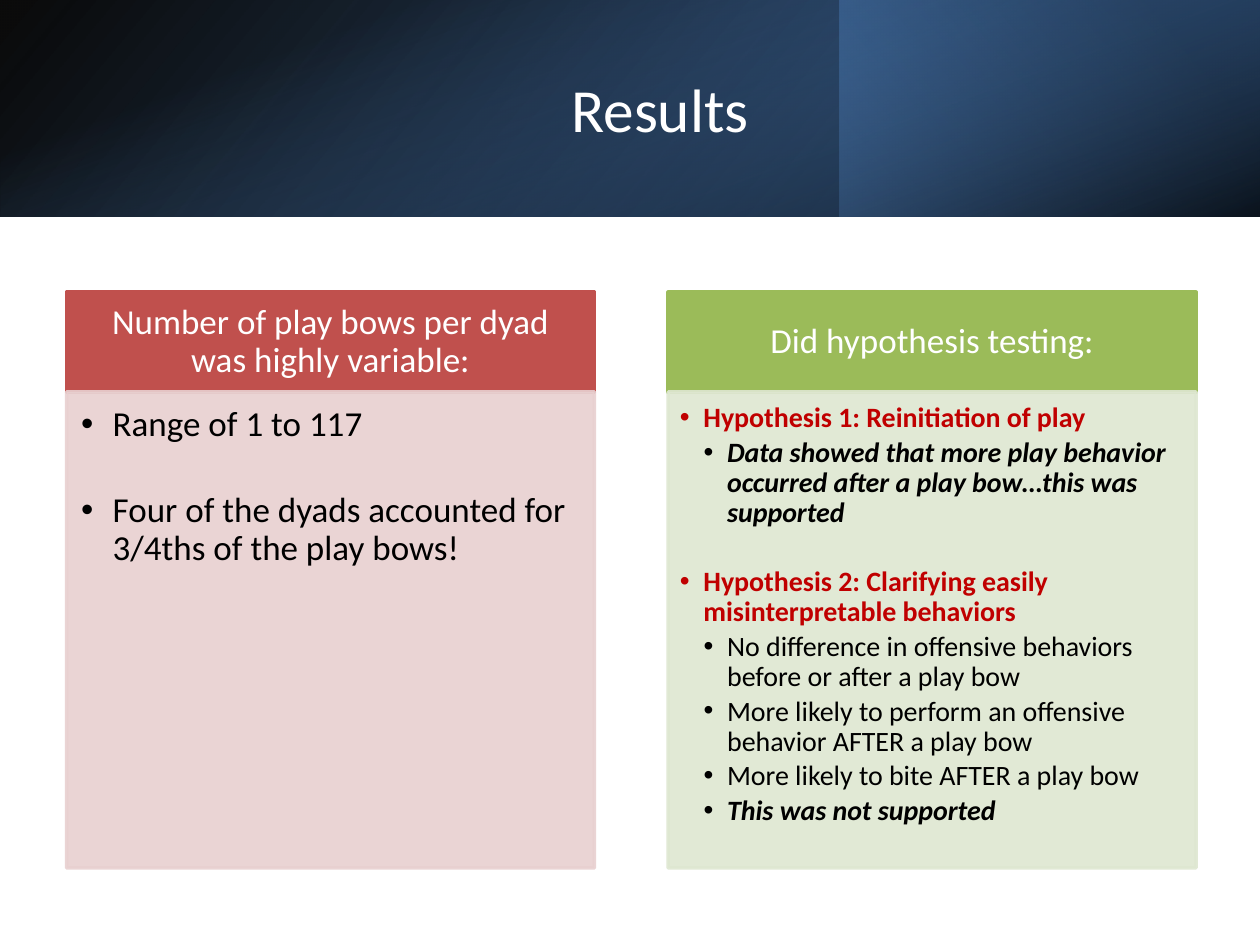
"""Build the Results slide with a shaded banner and two cards of findings."""
import dataclasses
import typing

import lxml.etree
import pptx
import pptx.dml.color
import pptx.enum.shapes
import pptx.enum.text
import pptx.oxml
import pptx.oxml.ns
import pptx.util

Pt = pptx.util.Pt
qn = pptx.oxml.ns.qn
Align = pptx.enum.text.PP_ALIGN
Anchor = pptx.enum.text.MSO_ANCHOR


@dataclasses.dataclass(frozen=True)
class Theme:
    font: str = "Calibri"
    white: str = "FFFFFF"
    black: str = "000000"
    red: str = "C00000"
    title: float = 35
    large: float = 20
    small: float = 16


class Box(typing.NamedTuple):
    left: float
    top: float
    width: float
    height: float


class Stop(typing.NamedTuple):
    place: int
    color: str
    alpha: int


class Band(typing.NamedTuple):
    box: Box
    angle: int
    stops: tuple[Stop, ...]
    turn: int = 0
    flip: bool = False


class Point(typing.NamedTuple):
    text: str
    level: int = 1
    color: str = "000000"
    bold: bool = False
    slant: bool = False
    after: float = 2.5


class Card(typing.NamedTuple):
    head: str
    dark: str
    light: str
    size: float
    indent: float
    inset: tuple[float, float, float, float]
    points: tuple[Point, ...]


THEME = Theme()
BANNER = 123.84
BANDS = (
    Band(Box(0, 0, 720, BANNER), 140,
         (Stop(0, "000000", 96), Stop(100, "376092", 100)), flip=True),
    Band(Box(480, 0, 240, BANNER), 320,
         (Stop(19, "254061", 68), Stop(100, "4F81BD", 79)), turn=180),
    Band(Box(360 - BANNER / 2, BANNER / 2 - 360, BANNER, 720), 340,
         (Stop(23, "4F81BD", 0), Stop(99, "000000", 74)), turn=90),
)
CARDS = (
    Card("Number of play bows per dyad was highly variable:", "C0504D", "E8D0D0",
         THEME.large, 18, (8.4, 8.4, 11.2, 12.6), (
             Point("Range of 1 to 117", after=27.5),
             Point("Four of the dyads accounted for 3/4ths of the play bows!"))),
    Card("Did hypothesis testing:", "9BBB59", "DEE7D1",
         THEME.small, 13.5, (6.7, 6.7, 9, 10.1), (
             Point("Hypothesis 1: Reinitiation of play", 1, THEME.red, True),
             Point("Data showed that more play behavior occurred after a play "
                   "bow…this was supported", 2, bold=True, slant=True, after=22),
             Point("Hypothesis 2: Clarifying easily misinterpretable behaviors",
                   1, THEME.red, True),
             Point("No difference in offensive behaviors before or after a play bow", 2),
             Point("More likely to perform an offensive behavior AFTER a play bow", 2),
             Point("More likely to bite AFTER a play bow", 2),
             Point("This was not supported", 2, bold=True, slant=True))),
)


def tint(code: str) -> pptx.dml.color.RGBColor:
    return pptx.dml.color.RGBColor.from_string(code)


def place(slide, box: Box):
    shape = slide.shapes.add_shape(
        pptx.enum.shapes.MSO_SHAPE.RECTANGLE, *(Pt(side) for side in box))
    shape.shadow.inherit = False
    return shape


def draw_band(slide, band: Band) -> None:
    shape = place(slide, band.box)
    shape.rotation = band.turn
    shape.line.fill.background()
    shape.fill.background()
    props = shape.element.spPr
    if band.flip:
        props.find(qn("a:xfrm")).set("flipH", "1")
    stops = "".join(
        f'<a:gs pos="{stop.place * 1000}"><a:srgbClr val="{stop.color}">'
        f'<a:alpha val="{stop.alpha * 1000}"/></a:srgbClr></a:gs>'
        for stop in band.stops)
    blend = pptx.oxml.parse_xml(
        f'<a:gradFill {pptx.oxml.ns.nsdecls("a")} rotWithShape="1">'
        f'<a:gsLst>{stops}</a:gsLst>'
        f'<a:lin ang="{band.angle * 60000}" scaled="0"/></a:gradFill>')
    props.replace(props.find(qn("a:noFill")), blend)


def draw_panel(slide, box: Box, color: str, alpha: int = 100):
    shape = place(slide, box)
    shape.line.width = Pt(2)
    for fill in (shape.fill, shape.line.fill):
        fill.solid()
        fill.fore_color.rgb = tint(color)
    if alpha < 100:
        for node in shape.element.spPr.iter(qn("a:srgbClr")):
            lxml.etree.SubElement(node, qn("a:alpha"), val=str(alpha * 1000))
    return shape


def set_frame(frame, inset: tuple, anchor) -> None:
    frame.word_wrap = True
    frame.vertical_anchor = anchor
    (frame.margin_left, frame.margin_top,
     frame.margin_right, frame.margin_bottom) = (Pt(side) for side in inset)


def style(para, size: float, color: str, align, bold=False, slant=False) -> None:
    para.alignment = align
    for run in para.runs:
        font = run.font
        font.name, font.size = THEME.font, Pt(size)
        font.bold, font.italic = bold, slant
        font.color.rgb = tint(color)


def set_bullet(para, level: int, indent: float) -> None:
    para.level = level - 1
    props = para._p.get_or_add_pPr()
    props.set("marL", str(Pt(indent * level)))
    props.set("indent", str(-Pt(indent)))
    lxml.etree.SubElement(props, qn("a:buFont"), typeface="Arial")
    lxml.etree.SubElement(props, qn("a:buChar"), char="•")


def draw_card(slide, card: Card, left: float) -> None:
    head = draw_panel(slide, Box(left, 167, 301.7, 57.3), card.dark).text_frame
    set_frame(head, (11.2, 6.4, 11.2, 6.4), Anchor.MIDDLE)
    head.text = card.head
    head.paragraphs[0].line_spacing = 0.9
    style(head.paragraphs[0], THEME.large, THEME.white, Align.CENTER)

    body = draw_panel(slide, Box(left, 224, 301.7, 272), card.light, 90).text_frame
    set_frame(body, card.inset, Anchor.TOP)
    body.text = "\n".join(point.text for point in card.points)
    for para, point in zip(body.paragraphs, card.points):
        para.line_spacing = 0.9
        para.space_before, para.space_after = Pt(0), Pt(point.after)
        set_bullet(para, point.level, card.indent)
        style(para, card.size, point.color, Align.LEFT, point.bold, point.slant)


def draw_title(slide, text: str) -> None:
    box = Box(80.6, 27.4, 593.3, 69.1)
    frame = slide.shapes.add_textbox(*(Pt(side) for side in box)).text_frame
    set_frame(frame, (7.2, 3.6, 7.2, 3.6), Anchor.MIDDLE)
    frame.text = text
    style(frame.paragraphs[0], THEME.title, THEME.white, Align.CENTER)


def main() -> None:
    deck = pptx.Presentation()
    deck.slide_width, deck.slide_height = Pt(720), Pt(540)
    slide = deck.slides.add_slide(deck.slide_layouts[6])
    for band in BANDS:
        draw_band(slide, band)
    draw_title(slide, "Results")
    for index, card in enumerate(CARDS):
        draw_card(slide, card, 38 + index * 343.8)
    deck.save("out.pptx")


if __name__ == "__main__":
    main()
